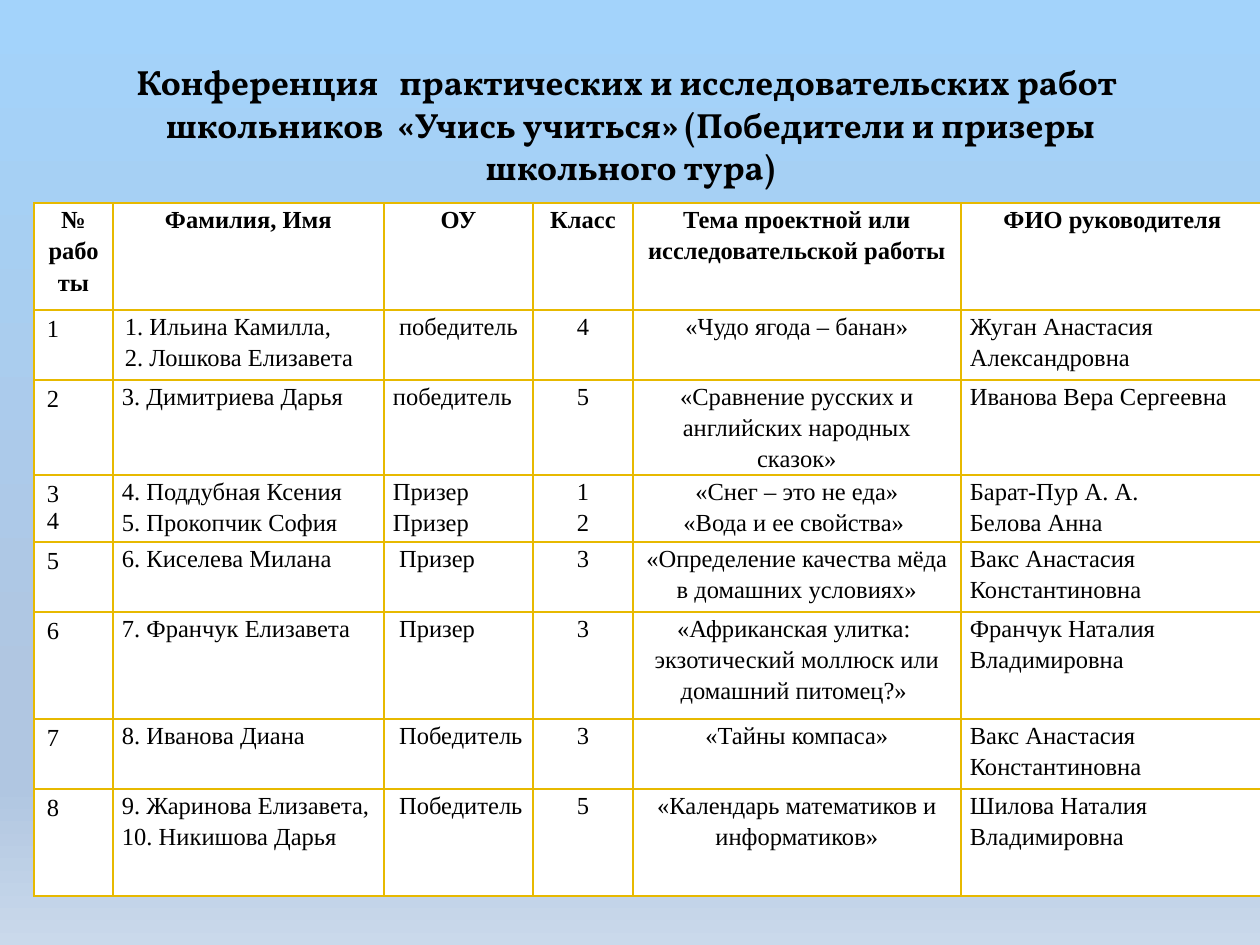
from lxml import etree
from pptx import Presentation
from pptx.dml.color import RGBColor
from pptx.enum.text import MSO_ANCHOR, MSO_AUTO_SIZE, PP_ALIGN
from pptx.oxml.ns import qn
from pptx.util import Emu, Pt

PX = 914400 / 126
LEFT, CENTER = PP_ALIGN.LEFT, PP_ALIGN.CENTER
MIDDLE, TOP = MSO_ANCHOR.MIDDLE, MSO_ANCHOR.TOP
NO_AUTOFIT = MSO_AUTO_SIZE.NONE

COLORS = {"text": "000000", "cell": "FFFFFF", "border": "E7B900"}
BACKGROUND_STOPS = [(0, "A3D3FB"), (74, "B0C6E1"), (83, "B0C6E1"), (100, "CAD9EB")]
TITLE = (
    "Конференция   практических и исследовательских работ \v"
    "школьников  «Учись учиться» (Победители и призеры школьного тура)"
)
COLUMN_WIDTHS = [79, 271, 149, 100, 328, 303]
ROW_HEIGHTS = [107, 70, 95, 67, 70, 107, 70, 107]
CENTERED_COLUMNS = (3, 4)
ROWS = [
    ["№\nработы", "Фамилия, Имя", "ОУ", "Класс",
     "Тема проектной или исследовательской работы", "ФИО руководителя"],
    ["1", "1. Ильина Камилла,\n2. Лошкова Елизавета", " победитель", "4",
     "«Чудо ягода – банан»", "Жуган Анастасия Александровна"],
    ["2", "3. Димитриева Дарья", "победитель", "5",
     "«Сравнение русских и английских народных сказок»", "Иванова Вера Сергеевна"],
    ["3\n4", "4. Поддубная Ксения\n5. Прокопчик София", "Призер\nПризер", "1\n2",
     "«Снег – это не еда»\n«Вода и ее свойства» ", "Барат-Пур А. А.\nБелова Анна"],
    ["5", "6. Киселева Милана", " Призер", "3",
     "«Определение качества мёда в домашних условиях»", "Вакс Анастасия Константиновна"],
    ["6", "7. Франчук Елизавета", " Призер", "3",
     "«Африканская улитка: \nэкзотический моллюск или домашний питомец?» ",
     "Франчук Наталия Владимировна"],
    ["7", "8. Иванова Диана", " Победитель", "3",
     "«Тайны компаса»", "Вакс Анастасия Константиновна"],
    ["8", "9. Жаринова Елизавета,\n10. Никишова Дарья", " Победитель", "5",
     "«Календарь математиков и информатиков»", "Шилова Наталия Владимировна"],
]


def px(length):
    return Emu(round(length * PX))


def set_background(slide):
    fill = slide.background.fill
    fill.gradient()
    fill.gradient_angle = 270
    stop_list = next(slide.element.iter(qn("a:gsLst")))
    for stop in list(stop_list):
        stop_list.remove(stop)
    for percent, color in BACKGROUND_STOPS:
        stop = etree.SubElement(stop_list, qn("a:gs"), pos=str(percent * 1000))
        etree.SubElement(stop, qn("a:srgbClr"), val=color)


def format_text(text_frame, font_name, size, bold, alignment, line_spacing):
    for paragraph in text_frame.paragraphs:
        paragraph.alignment = alignment
        paragraph.line_spacing = line_spacing
        for run in paragraph.runs:
            run.font.name = font_name
            run.font.size = Pt(size)
            run.font.bold = bold
            run.font.color.rgb = RGBColor.from_string(COLORS["text"])


def add_title(slide):
    title = slide.shapes.title
    title.left, title.top, title.width, title.height = px(95), px(45), px(1071), px(158)
    text_frame = title.text_frame
    text_frame.text = TITLE
    text_frame.word_wrap = True
    text_frame.auto_size = NO_AUTOFIT
    text_frame.vertical_anchor = MIDDLE
    format_text(text_frame, "Vollkorn", 20, True, CENTER, 1.0)


def set_borders(cell):
    properties = cell._tc.get_or_add_tcPr()
    for side in ("a:lnL", "a:lnR", "a:lnT", "a:lnB"):
        line = etree.SubElement(properties, qn(side), w=str(Pt(1)))
        fill = etree.SubElement(line, qn("a:solidFill"))
        etree.SubElement(fill, qn("a:srgbClr"), val=COLORS["border"])


def fill_cell(cell, text, row, column):
    is_header = row == 0
    is_number = column == 0 and not is_header
    horizontal, vertical = (13, 6) if is_number else (9, 0)
    cell.margin_left = cell.margin_right = px(horizontal)
    cell.margin_top = cell.margin_bottom = px(vertical)
    if (row, column) == (1, 1):
        cell.margin_left = px(12)
    cell.vertical_anchor = TOP
    set_borders(cell)
    cell.fill.solid()
    cell.fill.fore_color.rgb = RGBColor.from_string(COLORS["cell"])
    cell.text_frame.text = text
    alignment = CENTER if is_header or column in CENTERED_COLUMNS else LEFT
    line_spacing = 1.0 if is_number else 1.15
    format_text(cell.text_frame, "Times New Roman", 14, is_header, alignment, line_spacing)


def add_winners_table(slide):
    frame = slide.shapes.add_table(
        len(ROWS), len(COLUMN_WIDTHS), px(34), px(203),
        px(sum(COLUMN_WIDTHS)), px(sum(ROW_HEIGHTS)),
    )
    table = frame.table
    table.first_row = False
    table.horz_banding = False
    for column, width in zip(table.columns, COLUMN_WIDTHS):
        column.width = px(width)
    for row, height in zip(table.rows, ROW_HEIGHTS):
        row.height = px(height)
    for row_index, texts in enumerate(ROWS):
        for column_index, text in enumerate(texts):
            fill_cell(table.cell(row_index, column_index), text, row_index, column_index)


def main():
    presentation = Presentation()
    presentation.slide_width, presentation.slide_height = px(1260), px(945)
    slide = presentation.slides.add_slide(presentation.slide_layouts[5])
    set_background(slide)
    add_title(slide)
    add_winners_table(slide)
    presentation.save("out.pptx")


if __name__ == "__main__":
    main()
